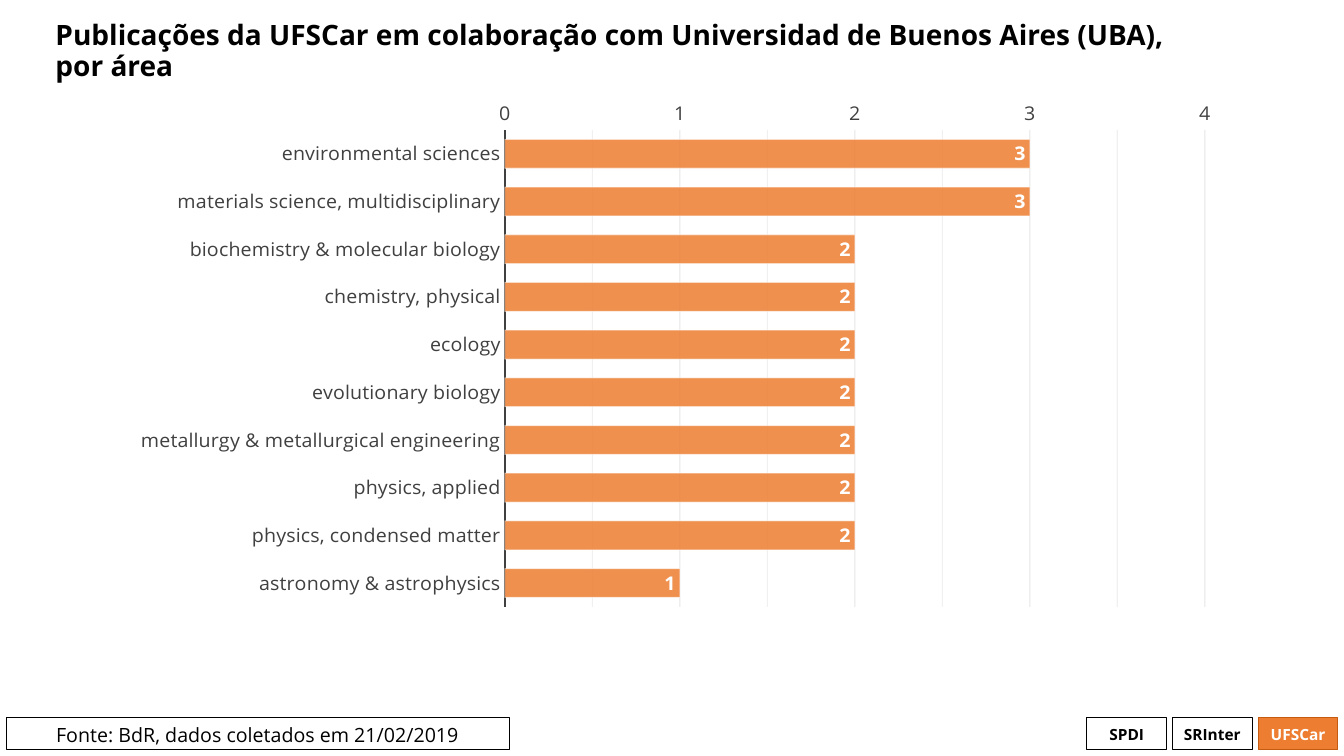
from copy import deepcopy

from lxml import etree
from pptx import Presentation
from pptx.chart.data import CategoryChartData
from pptx.dml.color import RGBColor
from pptx.enum.chart import (XL_AXIS_CROSSES, XL_CHART_TYPE, XL_LABEL_POSITION,
                             XL_TICK_MARK)
from pptx.enum.shapes import MSO_SHAPE
from pptx.enum.text import MSO_ANCHOR, PP_ALIGN
from pptx.oxml.ns import qn
from pptx.util import Inches, Pt

BARS = XL_CHART_TYPE.BAR_CLUSTERED
MAX = XL_AXIS_CROSSES.MAXIMUM
IN_END = XL_LABEL_POSITION.INSIDE_END
NO_TICK = XL_TICK_MARK.NONE
RECT = MSO_SHAPE.RECTANGLE
TOP, MID = MSO_ANCHOR.TOP, MSO_ANCHOR.MIDDLE
LEFT, CENTER = PP_ALIGN.LEFT, PP_ALIGN.CENTER

COLORS = {"black": "000000", "white": "FFFFFF", "gray": "404040",
          "grid": "0D0D0D", "orange": "ED7D31", "rust": "C55A11"}

AREAS = {
    "environmental sciences": 3,
    "materials science, multidisciplinary": 3,
    "biochemistry & molecular biology": 2,
    "chemistry, physical": 2,
    "ecology": 2,
    "evolutionary biology": 2,
    "metallurgy & metallurgical engineering": 2,
    "physics, applied": 2,
    "physics, condensed matter": 2,
    "astronomy & astrophysics": 1,
}


def put(item, **values):
    for name, value in values.items():
        setattr(item, name, value)


def color(name):
    return RGBColor.from_string(COLORS[name])


def fade(node, *alphas):
    """Give each colour under the node its opacity in percent."""
    for tint, alpha in zip(node.iter(qn("a:srgbClr")), alphas):
        etree.SubElement(tint, qn("a:alpha")).set("val", str(alpha * 1000))


class Deck:
    face = "Open Sans"

    def __init__(self, wide, high):
        self.file = Presentation()
        put(self.file, slide_width=Inches(wide), slide_height=Inches(high))
        self.slide = self.file.slides.add_slide(self.file.slide_layouts[5])

    def font(self, font, size, tint, bold=False):
        put(font, name=self.face, size=Pt(size), bold=bold)
        font.color.rgb = color(tint)

    def line(self, line, tint, width=0.75):
        line.color.rgb = color(tint)
        line.width = Pt(width)

    def title(self, box, rows, size):
        shape = self.slide.shapes.title
        put(shape, **box)
        frame = shape.text_frame
        put(frame, word_wrap=True, vertical_anchor=MID)
        para = frame.paragraphs[0]
        put(para, alignment=LEFT, line_spacing=0.9)
        for i, row in enumerate(rows):
            if i:
                para.add_line_break()
            run = para.add_run()
            run.text = row
            self.font(run.font, size, "black", True)

    def box(self, box, text, size, tint="black", fill=None, edge="black",
            bold=False, anchor=MID):
        shape = self.slide.shapes.add_shape(RECT, *box.values())
        shape.shadow.inherit = False
        if fill:
            shape.fill.solid()
            shape.fill.fore_color.rgb = color(fill)
        else:
            shape.fill.background()
        self.line(shape.line, edge)
        frame = shape.text_frame
        put(frame, word_wrap=True, vertical_anchor=anchor)
        para = frame.paragraphs[0]
        para.alignment = CENTER
        run = para.add_run()
        run.text = text
        self.font(run.font, size, tint, bold)

    def chart(self, box, data, size, plot_box):
        source = CategoryChartData(number_format="0")
        source.categories = list(data)
        source.add_series("Series 1", list(data.values()))
        chart = self.slide.shapes.add_chart(BARS, *box.values(), source).chart
        put(chart, has_title=False, has_legend=False)
        self.font(chart.font, size, "black")

        # Axes
        cats, vals = chart.category_axis, chart.value_axis
        for axis in (cats, vals):
            put(axis, major_tick_mark=NO_TICK, minor_tick_mark=NO_TICK)
            self.font(axis.tick_labels.font, size, "gray")
        put(cats, reverse_order=True, crosses=MAX, has_major_gridlines=False)
        self.line(cats.format.line, "gray", 1.5)
        put(vals, minimum_scale=0, maximum_scale=4, major_unit=1, minor_unit=0.5,
            has_major_gridlines=True, has_minor_gridlines=True)
        vals.format.line.fill.background()
        self.line(vals.major_gridlines.format.line, "grid")

        # Bars and their values
        plot = chart.plots[0]
        put(plot, gap_width=65, vary_by_categories=False)
        bars = plot.series[0]
        bars.format.fill.solid()
        bars.format.fill.fore_color.rgb = color("orange")
        self.line(bars.format.line, "white")
        labels = bars.data_labels
        put(labels, show_value=True, position=IN_END)
        self.font(labels.font, size, "white", True)

        # Minor gridlines take the major style; opacity
        root = chart.element
        major = next(root.iter(qn("c:majorGridlines")))
        minor = next(root.iter(qn("c:minorGridlines")))
        minor.append(deepcopy(major.find(qn("c:spPr"))))
        fade(major, 10)
        fade(minor, 5)
        fade(next(root.iter(qn("c:ser"))).find(qn("c:spPr")), 85, 50)

        # Inner plot position, as shares of the chart
        area = next(root.iter(qn("c:plotArea")))
        for old in area.findall(qn("c:layout")):
            area.remove(old)
        layout = etree.Element(qn("c:layout"))
        manual = etree.SubElement(layout, qn("c:manualLayout"))
        parts = {"layoutTarget": "inner", "xMode": "edge", "yMode": "edge"}
        for tag, value in {**parts, **plot_box}.items():
            etree.SubElement(manual, qn("c:" + tag)).set("val", str(value))
        area.insert(0, layout)


def box(left, top, width, height):
    return {"left": Inches(left), "top": Inches(top),
            "width": Inches(width), "height": Inches(height)}


def main():
    deck = Deck(13.33, 7.5)

    # Footer: source and unit tags
    foot, high = 7.12, 0.32
    deck.box(box(0.06, foot, 4.99, high),
             "Fonte: BdR, dados coletados em 21/02/2019", 14, anchor=TOP)
    looks = {"SPDI": {}, "SRInter": {},
             "UFSCar": {"tint": "white", "fill": "orange", "edge": "rust"}}
    for i, (name, look) in enumerate(looks.items()):
        deck.box(box(10.78 + 0.85 * i, foot, 0.79, high), name, 11,
                 bold=True, **look)

    # Heading
    deck.title(box(0.45, 0.06, 12.41, 0.91),
               ["Publicações da UFSCar em colaboração com "
                "Universidad de Buenos Aires (UBA),", "por área"], 20)

    # Publications by area
    deck.chart(box(1.15, 0.99, 11.02, 5.51), AREAS, 14,
               {"x": 0.35, "y": 0.02, "w": 0.63, "h": 0.89})

    deck.file.save("out.pptx")


if __name__ == "__main__":
    main()
